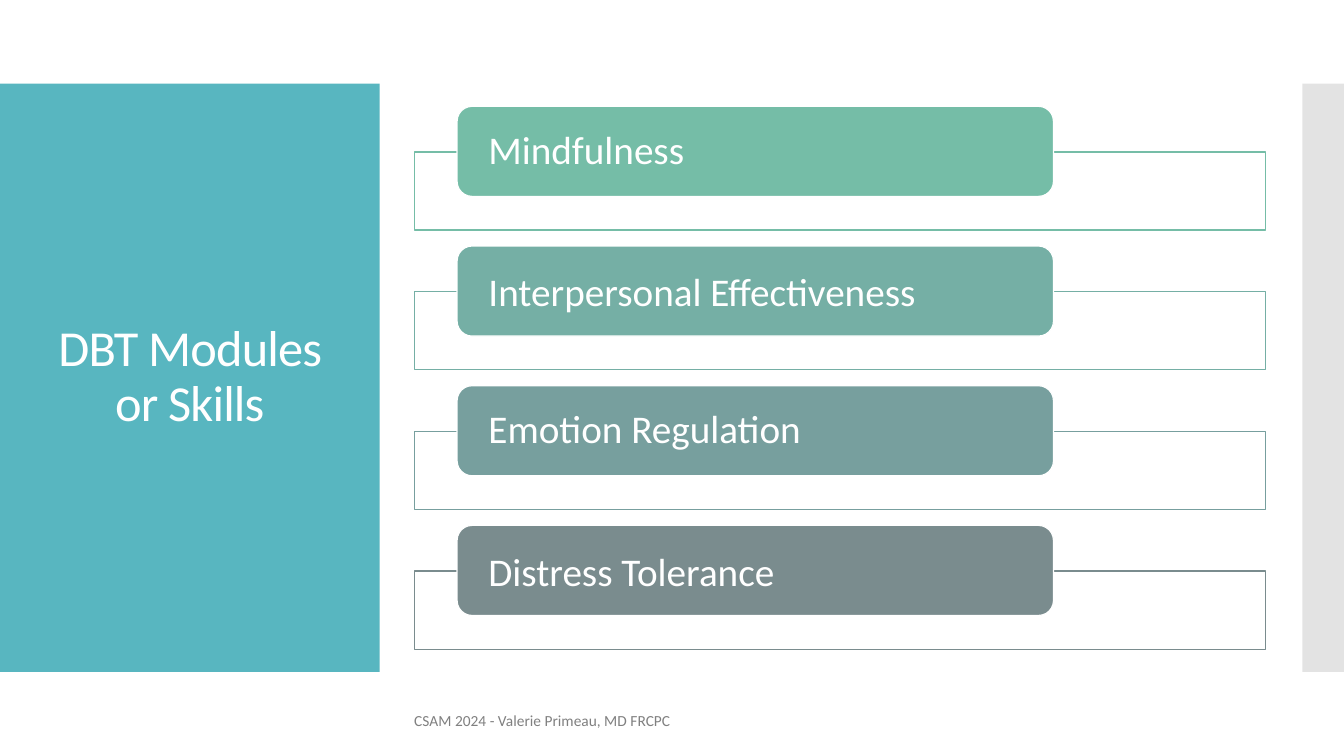
import lxml.etree
import pptx
import pptx.dml.color
import pptx.enum.shapes
import pptx.enum.text
import pptx.oxml.ns
import pptx.util

Cm = pptx.util.Cm
Pt = pptx.util.Pt
RGBColor = pptx.dml.color.RGBColor
SHAPES = pptx.enum.shapes.MSO_SHAPE
ALIGN = pptx.enum.text.PP_ALIGN
qn = pptx.oxml.ns.qn

WHITE = RGBColor(0xFF, 0xFF, 0xFF)
TEAL = RGBColor(0x58, 0xB6, 0xC0)
LIGHT_GREY = RGBColor(0xC8, 0xC8, 0xC8)
FOOTER_GREY = RGBColor(0x80, 0x80, 0x80)

TITLE = "DBT Modules or Skills"
FOOTER = "CSAM 2024 - Valerie Primeau, MD FRCPC"
MODULES = [
    {"name": "Mindfulness", "color": RGBColor(0x75, 0xBD, 0xA7), "spacing": 0.9},
    {"name": "Interpersonal Effectiveness", "color": RGBColor(0x75, 0xAF, 0xA5), "spacing": 1.0},
    {"name": "Emotion Regulation", "color": RGBColor(0x77, 0x9F, 0x9E), "spacing": 0.9},
    {"name": "Distress Tolerance", "color": RGBColor(0x7A, 0x8C, 0x8E), "spacing": 1.0},
]

TITLE_FONT = {"name": "Calibri", "size": Pt(36)}
MODULE_FONT = {"name": "Calibri", "size": Pt(28)}
FOOTER_FONT = {"name": "Calibri", "size": Pt(11)}
TITLE_MARGINS = {"margin_left": Cm(0.97), "margin_right": Cm(0.97)}
MODULE_MARGINS = {
    "margin_left": Cm(0.68), "margin_right": Cm(0.68),
    "margin_top": Cm(0), "margin_bottom": Cm(0),
}

BAND_TOP, BAND_HEIGHT = 2.11, 14.82
FRAME_TOP, LABEL_TOP, ROW_PITCH = 3.83, 2.68, 3.52


def set_all(target, values):
    for attribute, value in values.items():
        setattr(target, attribute, value)


def add_box(slide, kind, box, fill, line=None, opacity=100):
    shape = slide.shapes.add_shape(kind, *map(Cm, box))
    shape.shadow.inherit = False
    shape.fill.solid()
    shape.fill.fore_color.rgb = fill
    if opacity < 100:
        color = shape.fill._xPr.find(qn("a:solidFill")).find(qn("a:srgbClr"))
        lxml.etree.SubElement(color, qn("a:alpha"), val=str(opacity * 1000))
    if line is None:
        shape.line.fill.background()
    else:
        shape.line.color.rgb = line
        shape.line.width = Pt(0.85)
    return shape


def write(shape, text, font, color, align, spacing=1.0, margins=None):
    frame = shape.text_frame
    set_all(frame, {"word_wrap": True, "vertical_anchor": pptx.enum.text.MSO_ANCHOR.MIDDLE})
    set_all(frame, margins or {})
    paragraph = frame.paragraphs[0]
    set_all(paragraph, {"alignment": align, "line_spacing": spacing})
    run = paragraph.add_run()
    run.text = text
    set_all(run.font, font)
    run.font.color.rgb = color
    return run


def main():
    presentation = pptx.Presentation()
    set_all(presentation, {"slide_width": Cm(33.87), "slide_height": Cm(19.05)})
    slide = presentation.slides.add_slide(presentation.slide_layouts[6])

    panel = add_box(slide, SHAPES.RECTANGLE, (0, BAND_TOP, 9.57, BAND_HEIGHT), TEAL)
    title = write(panel, TITLE, TITLE_FONT, WHITE, ALIGN.CENTER, 0.9, TITLE_MARGINS)
    title.font._element.set("spc", "-60")
    add_box(slide, SHAPES.RECTANGLE, (32.82, BAND_TOP, 1.05, BAND_HEIGHT), LIGHT_GREY, opacity=50)

    footer = slide.shapes.add_textbox(Cm(10.19), Cm(17.65), Cm(16.99), Cm(1.02))
    write(footer, FOOTER, FOOTER_FONT, FOOTER_GREY, ALIGN.LEFT)

    for row, module in enumerate(MODULES):
        offset = row * ROW_PITCH
        add_box(slide, SHAPES.RECTANGLE, (10.44, FRAME_TOP + offset, 21.46, 1.97),
                WHITE, module["color"], 90)
        label = add_box(slide, SHAPES.ROUNDED_RECTANGLE,
                        (11.52, LABEL_TOP + offset, 15.03, 2.27), module["color"], WHITE)
        write(label, module["name"], MODULE_FONT, WHITE, ALIGN.LEFT,
              module["spacing"], MODULE_MARGINS)

    presentation.save("out.pptx")


if __name__ == "__main__":
    main()
